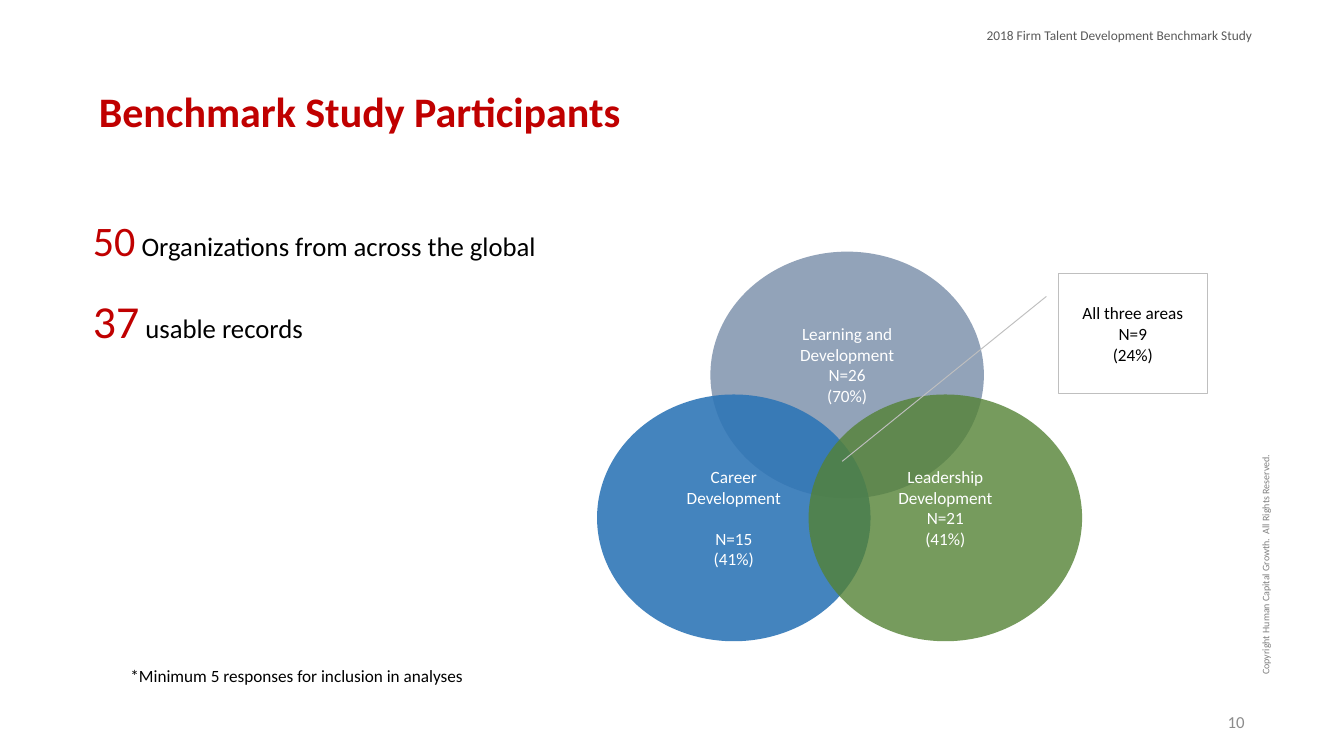
import pptx
import pptx.dml.color
import pptx.enum.shapes
import pptx.enum.text
import pptx.oxml.ns
import pptx.util
import lxml.etree

Cm = pptx.util.Cm
Pt = pptx.util.Pt
RGBColor = pptx.dml.color.RGBColor
SHAPE = pptx.enum.shapes.MSO_SHAPE
ALIGN = pptx.enum.text.PP_ALIGN
ANCHOR = pptx.enum.text.MSO_ANCHOR
qn = pptx.oxml.ns.qn

RED = RGBColor(0xC0, 0x00, 0x00)
BLACK = RGBColor(0x00, 0x00, 0x00)
WHITE = RGBColor(0xFF, 0xFF, 0xFF)
SLATE = RGBColor(0x84, 0x97, 0xB0)
BLUE = RGBColor(0x2E, 0x75, 0xB6)
GREEN = RGBColor(0x54, 0x82, 0x35)
BORDER = RGBColor(0xBF, 0xBF, 0xBF)
HEADER_GRAY = RGBColor(0x59, 0x59, 0x59)
COPYRIGHT_GRAY = RGBColor(0x80, 0x80, 0x80)
NUMBER_GRAY = RGBColor(0x8C, 0x8C, 0x8C)

CIRCLE_WIDTH, CIRCLE_HEIGHT = 10.11, 9.12
LINE_HEIGHT = 0.76


def add_text(paragraph, text, size=18, color=BLACK, bold=False, align=ALIGN.LEFT):
    paragraph.alignment = align
    run = paragraph.add_run()
    run.text = text
    run.font.name = "Calibri"
    run.font.size = Pt(size)
    run.font.bold = bold
    run.font.color.rgb = color


def add_lines(frame, lines, **text_format):
    for index, line in enumerate(lines):
        paragraph = frame.add_paragraph() if index else frame.paragraphs[0]
        add_text(paragraph, line, **text_format)


def place(shape, box):
    shape.left, shape.top, shape.width, shape.height = map(Cm, box)


def add_label(slide, box, text, anchor=ANCHOR.TOP, wrap=True, rotation=0, **text_format):
    label = slide.shapes.add_textbox(*map(Cm, box))
    label.rotation = rotation
    label.text_frame.word_wrap = wrap
    label.text_frame.vertical_anchor = anchor
    add_text(label.text_frame.paragraphs[0], text, **text_format)


def add_title(slide, box):
    title = slide.shapes.title
    place(title, box)
    frame = title.text_frame
    frame.vertical_anchor = ANCHOR.MIDDLE
    frame.auto_size = pptx.enum.text.MSO_AUTO_SIZE.NONE
    frame.paragraphs[0].line_spacing = 0.9
    add_text(frame.paragraphs[0], "Benchmark Study Participants", size=44, color=RED, bold=True)


def add_figures(slide, box):
    figures = slide.placeholders[1]
    place(figures, box)
    frame = figures.text_frame
    frame.auto_size = pptx.enum.text.MSO_AUTO_SIZE.NONE
    rows = [
        ("50", 44, " Organizations from across the global"),
        ("37", 48, " usable records"),
    ]
    for index, (count, count_size, meaning) in enumerate(rows):
        paragraph = frame.add_paragraph() if index else frame.paragraphs[0]
        properties = paragraph._p.get_or_add_pPr()
        properties.set("marL", "0")
        properties.set("indent", "0")
        lxml.etree.SubElement(properties, qn("a:buNone"))
        paragraph.line_spacing = 1.5
        paragraph.space_before = Pt(0)
        add_text(paragraph, count, size=count_size, color=RED)
        add_text(paragraph, meaning, size=28)


def add_circle(slide, left, top, color, opacity, lines, lift=0):
    circle = slide.shapes.add_shape(
        SHAPE.OVAL, Cm(left), Cm(top), Cm(CIRCLE_WIDTH), Cm(CIRCLE_HEIGHT))
    circle.shadow.inherit = False
    circle.fill.solid()
    circle.fill.fore_color.rgb = color
    color_element = circle._element.spPr.find(qn("a:solidFill"))[0]
    lxml.etree.SubElement(color_element, qn("a:alpha"), val=str(opacity * 1000))
    circle.line.fill.background()
    frame = circle.text_frame
    frame.word_wrap = True
    frame.vertical_anchor = ANCHOR.MIDDLE
    frame.margin_left = frame.margin_right = Cm(0.38)
    frame.margin_top = Cm(0.18)
    frame.margin_bottom = Cm(0.18 + lift)
    add_lines(frame, lines, color=WHITE, align=ALIGN.CENTER)
    return circle


def add_venn(slide, box):
    left, top, width, height = box
    lower_top = top + height - CIRCLE_HEIGHT
    add_circle(slide, left + 4.19, top, SLATE, 88,
               ["Learning and Development", "N=26", "(70%)"], lift=LINE_HEIGHT)
    career = add_circle(slide, left, lower_top, BLUE, 89,
                        ["Career", "Development", "N=15", "(41%)"])
    career.text_frame.paragraphs[2].space_before = Cm(LINE_HEIGHT)
    add_circle(slide, left + width - CIRCLE_WIDTH, lower_top, GREEN, 80,
               ["Leadership", "Development", "N=21", "(41%)"], lift=LINE_HEIGHT)


def add_overlap_callout(slide, box):
    callout = slide.shapes.add_shape(SHAPE.LINE_CALLOUT_1, *map(Cm, box))
    callout.shadow.inherit = False
    for index, value in enumerate((0.19, -0.08, 1.56, -1.45)):
        callout.adjustments[index] = value
    callout.fill.solid()
    callout.fill.fore_color.rgb = WHITE
    callout.line.color.rgb = BORDER
    callout.line.width = Pt(1)
    callout.text_frame.word_wrap = True
    callout.text_frame.vertical_anchor = ANCHOR.MIDDLE
    add_lines(callout.text_frame, ["All three areas", "N=9", "(24%)"], align=ALIGN.CENTER)


def main():
    deck = pptx.Presentation()
    deck.slide_width, deck.slide_height = Cm(49.68), Cm(27.94)
    slide = deck.slides.add_slide(deck.slide_layouts[1])
    add_label(slide, (42.11, 20.02, 9.32, 1.02),
              "Copyright Human Capital Growth.  All Rights Reserved.",
              anchor=ANCHOR.MIDDLE, rotation=270, size=10.5, color=COPYRIGHT_GRAY)
    add_label(slide, (36.22, 0.89, 10.57, 0.86),
              "2018 Firm Talent Development Benchmark Study",
              wrap=False, size=14, color=HEADER_GRAY)
    add_title(slide, (3.4, 1.5, 42.85, 5.41))
    add_venn(slide, (22.07, 9.3, 17.93, 14.4))
    add_overlap_callout(slide, (39.12, 10.11, 5.51, 4.45))
    add_figures(slide, (3.18, 6.88, 19.46, 6.15))
    add_label(slide, (4.57, 24.46, 19.86, 1.02),
              "*Minimum 5 responses for inclusion in analyses")
    add_label(slide, (35.08, 25.91, 11.18, 1.5), "10",
              anchor=ANCHOR.MIDDLE, size=17.6, color=NUMBER_GRAY, align=ALIGN.RIGHT)
    deck.save("out.pptx")


if __name__ == "__main__":
    main()
